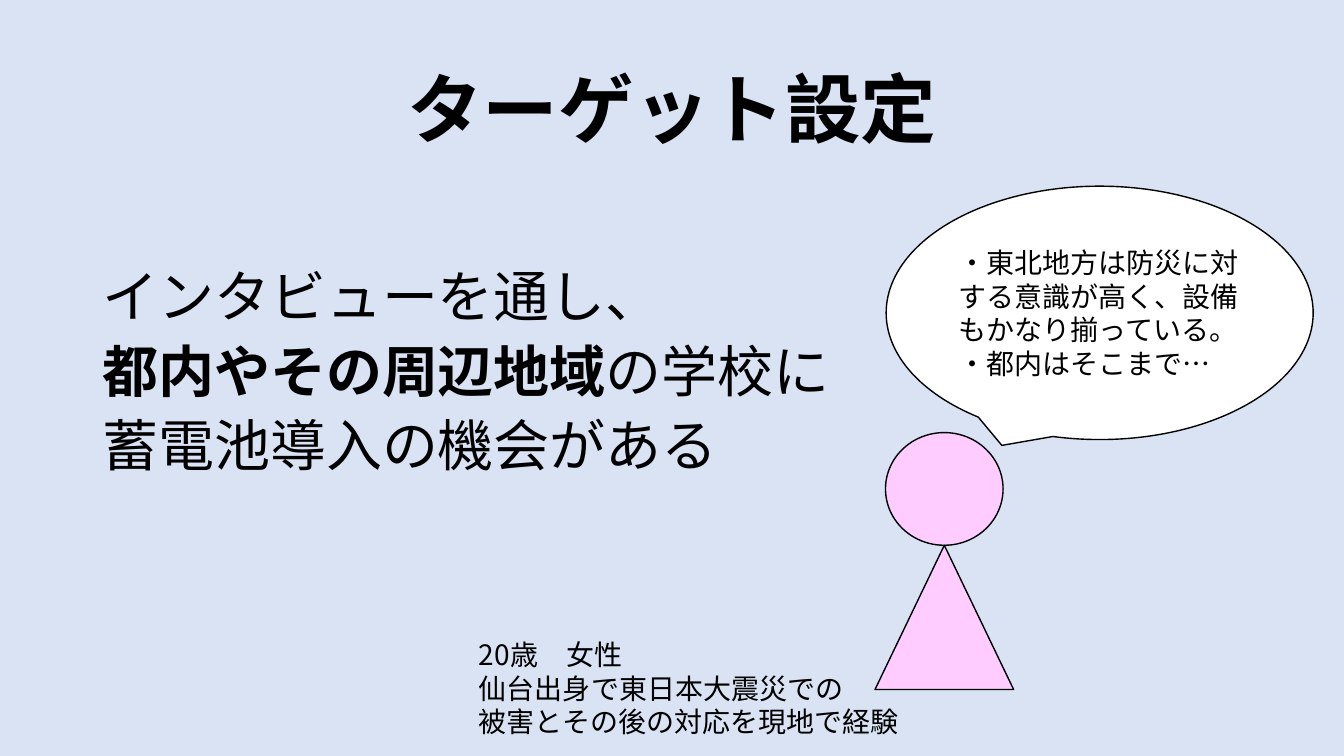
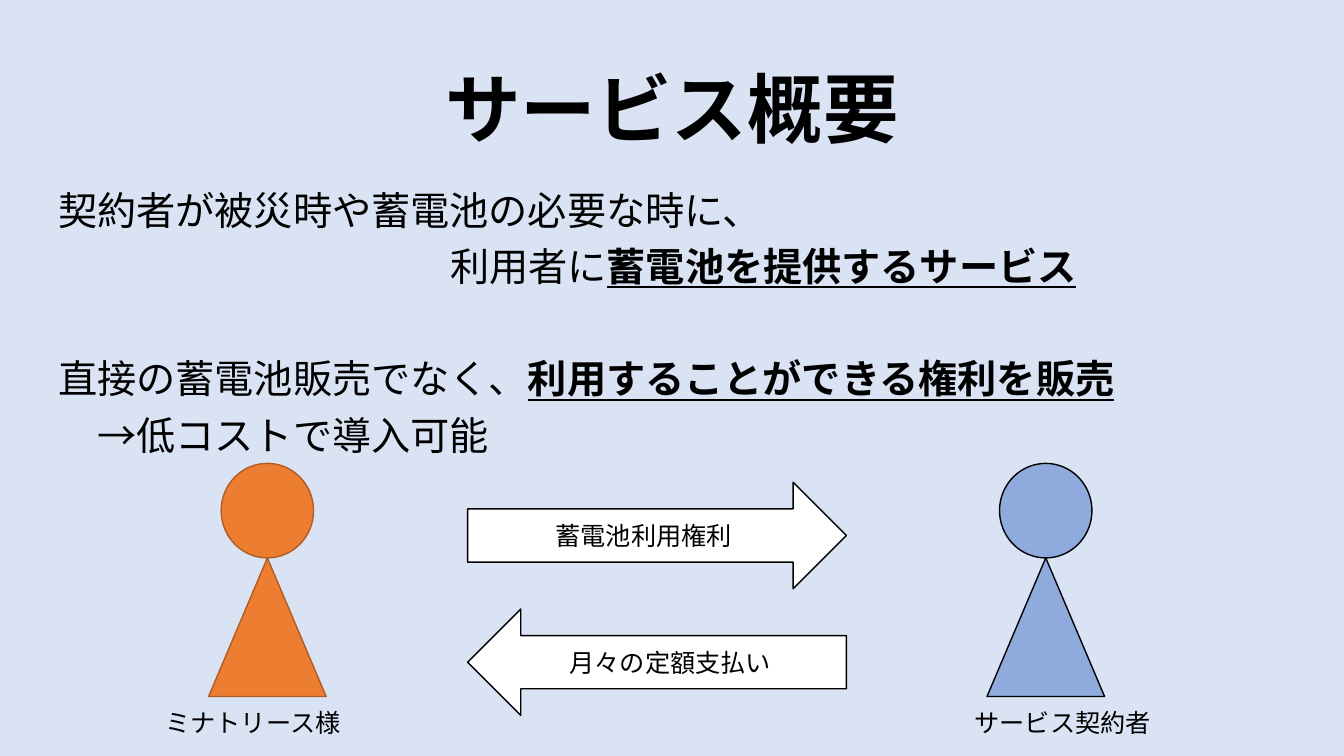
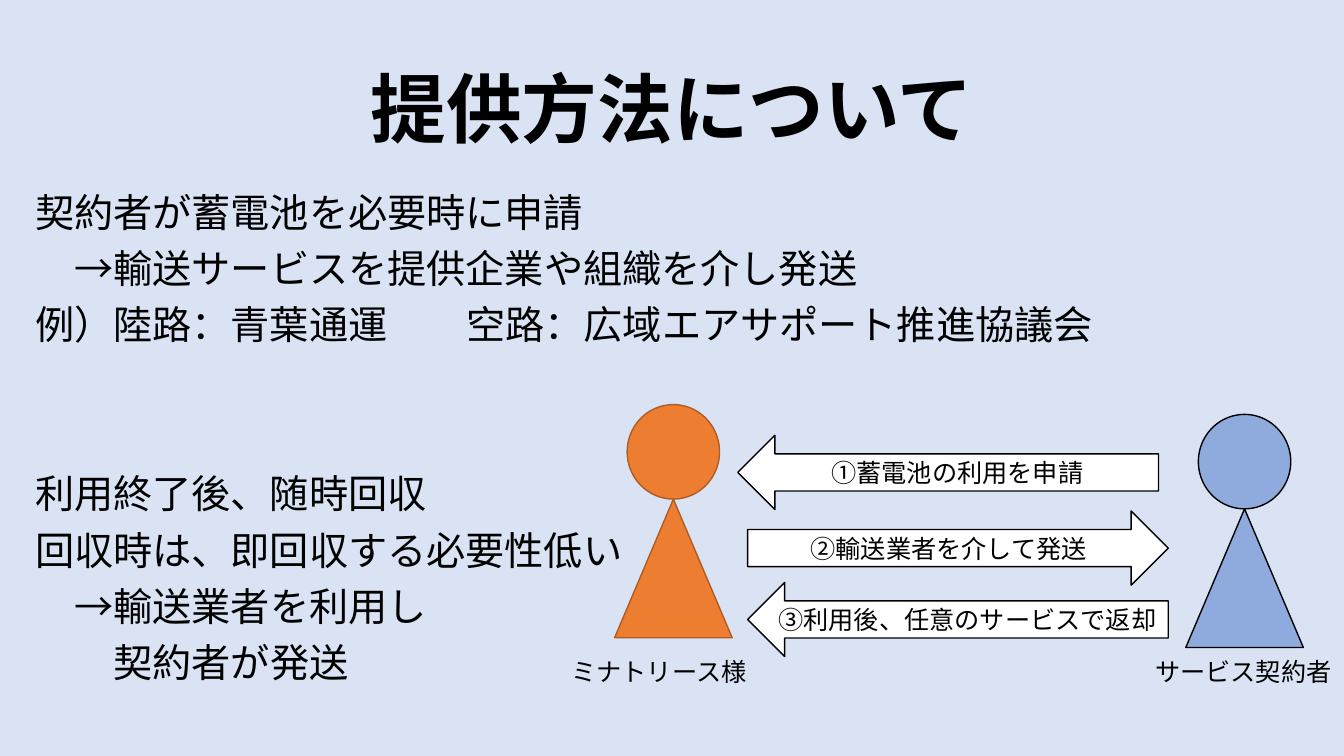
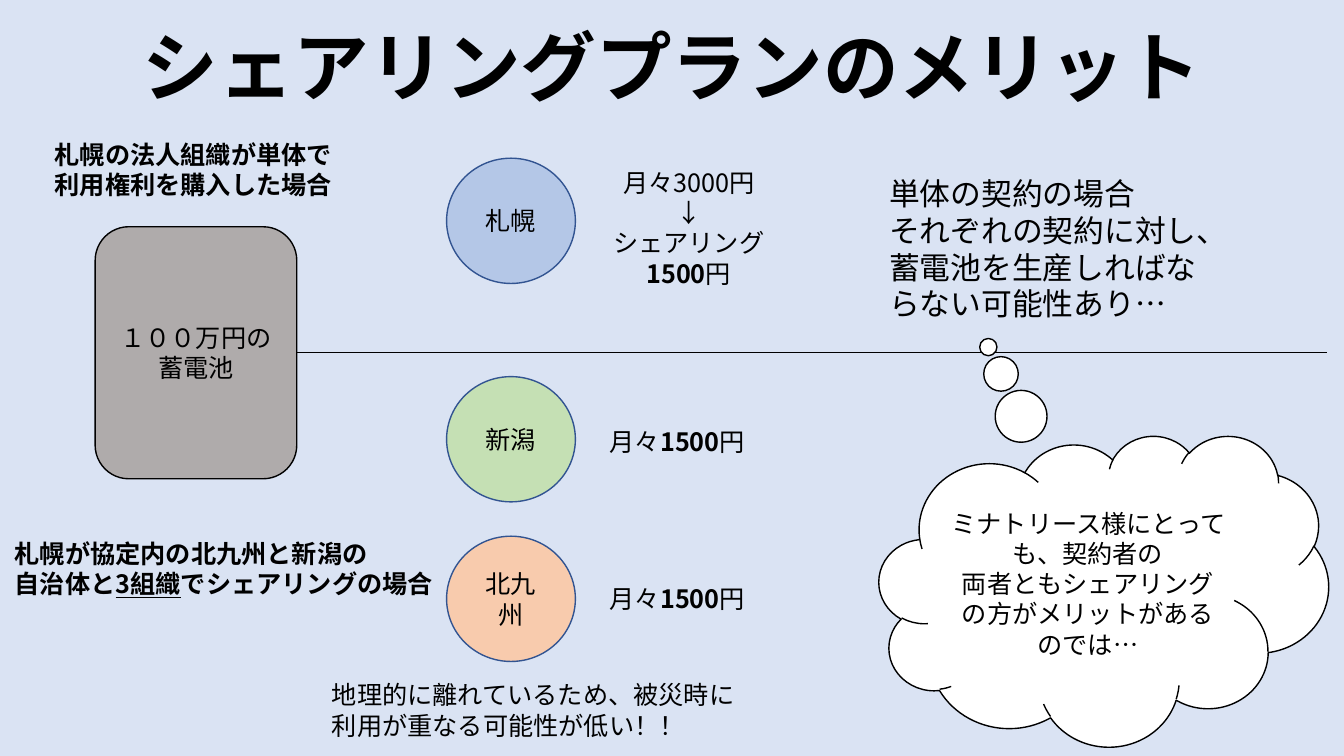
from dataclasses import dataclass
from lxml import etree
from pptx import Presentation
from pptx.dml.color import RGBColor
from pptx.enum import shapes, text
from pptx.oxml import ns
from pptx.util import Pt


@dataclass(frozen=True)
class Theme:
    font: str = "Noto Sans CJK JP"
    back: str = "DAE3F3"
    ink: str = "000000"
    white: str = "FFFFFF"
    pink: str = "FFCCFF"
    orange: str = "ED7D31"
    rust: str = "AF5C24"
    blue: str = "8FAADC"
    navy: str = "325491"
    sky: str = "B4C7E7"
    green: str = "C5E0B4"
    peach: str = "F8CBAD"
    gray: str = "AFABAB"
    title: int = 54
    lead: int = 40
    body: int = 28
    quote: int = 22
    note: int = 20
    label: int = 18


look = Theme()
kinds = shapes.MSO_SHAPE
left, mid = text.PP_ALIGN.LEFT, text.PP_ALIGN.CENTER
top, middle = text.MSO_ANCHOR.TOP, text.MSO_ANCHOR.MIDDLE


def write(frame, lines, size=look.label, bold=False, mark="b", align=left,
          anchor=top, space=1.0, before=0, gaps=None, dents=None, tab=None):
    frame.word_wrap = True
    frame.auto_size = text.MSO_AUTO_SIZE.NONE
    frame.vertical_anchor = anchor
    for row, line in enumerate(lines):
        para = frame.add_paragraph() if row else frame.paragraphs[0]
        para.alignment = align
        para.line_spacing = space
        para.space_before = Pt((gaps or {}).get(row, before) if row else 0)
        props = para._p.get_or_add_pPr()
        if dents and row in dents:
            props.set("marL", str(Pt(dents[row])))
            props.set("indent", "0")
        if "\t" in line:
            stops = etree.SubElement(props, ns.qn("a:tabLst"))
            etree.SubElement(stops, ns.qn("a:tab"), pos=str(Pt(tab)), algn="l")
        for part, words in enumerate(line.split("|")):
            if not words:
                continue
            run = para.add_run()
            run.text = words
            strong = part % 2 == 1
            run.font.size = Pt(size)
            run.font.bold = bold or (strong and "b" in mark)
            run.font.underline = strong and "u" in mark
            run.font.color.rgb = RGBColor.from_string(look.ink)
            run.font.name = look.font
            etree.SubElement(run._r.get_or_add_rPr(), ns.qn("a:ea"), typeface=look.font)


def draw(slide, kind, box, fill=look.white, edge=look.ink, lines=(), align=mid,
         size=look.label, tail=()):
    item = slide.shapes.add_shape(kind, *map(Pt, box))
    item.shadow.inherit = False
    item.fill.solid()
    item.fill.fore_color.rgb = RGBColor.from_string(fill)
    item.line.color.rgb = RGBColor.from_string(edge)
    item.line.width = Pt(1)
    for spot, value in enumerate(tail):
        item.adjustments[spot] = value
    if lines:
        write(item.text_frame, lines, size=size, align=align, anchor=middle)
    return item


deck = Presentation()
deck.slide_width, deck.slide_height = Pt(960), Pt(540)
fill = deck.slide_master.background.fill
fill.solid()
fill.fore_color.rgb = RGBColor.from_string(look.back)

pages = []
for name, y in [("ターゲット設定", 29), ("サービス概要", 29),
                ("提供方法について", 29), ("シェアリングプランのメリット", -1)]:
    page = deck.slides.add_slide(deck.slide_layouts[5])
    head = page.shapes.title
    head.left, head.top, head.width, head.height = map(Pt, (66, y, 828, 104))
    write(head.text_frame, [name], size=look.title, bold=True, align=mid,
          anchor=middle, space=0.9)
    pages.append(page)
target, service, supply, merit = pages

client = "ミナトリース様"
user = "サービス契約者"
flow = dict(space=0.9, before=10)
strong = dict(bold=True, mark="u")
notes = [
    (target, (66, 189, 783, 324),
     ["インタビューを通し、", "|都内やその周辺地域|の学校に", "蓄電池導入の機会がある"],
     dict(flow, size=look.lead)),
    (target, (335, 452, 318, 80),
     ["20歳　女性", "仙台出身で東日本大震災での", "被害とその後の対応を現地で経験"],
     dict(size=look.note)),
    (service, (34.5, 133, 896, 407),
     ["契約者が被災時や蓄電池の必要な時に、", "利用者に|蓄電池を提供するサービス|",
      "直接の蓄電池販売でなく、|利用することができる権利を販売|", "→低コストで導入可能"],
     dict(flow, size=look.body, mark="bu", gaps={2: 50}, dents={1: 280, 3: 28})),
    (supply, (18, 134.5, 830, 386),
     ["契約者が蓄電池を必要時に申請", "→輸送サービスを提供企業や組織を介し発送",
      "例）陸路：青葉通運\t空路：広域エアサポート推進協議会", "利用終了後、随時回収",
      "回収時は、即回収する必要性低い", "→輸送業者を利用し", "契約者が発送"],
     dict(flow, size=look.body, gaps={3: 90.5}, dents={1: 28, 5: 28, 6: 56}, tab=308)),
    (service, (111, 502, 142, 29), [client], {}),
    (service, (689, 502, 142, 29), [user], {}),
    (supply, (401, 465, 142, 29), [client], {}),
    (supply, (818, 465, 142, 29), [user], {}),
    (merit, (32, 96, 215, 51), ["札幌の法人組織が単体で", "利用権利を購入した場合"], strong),
    (merit, (3.5, 381, 315.5, 51),
     ["札幌が協定内の北九州と新潟の", "自治体と|3組織|でシェアリングの場合"], strong),
    (merit, (428.5, 116, 127, 94), ["月々3000円", "↓", "シェアリング", "|1500|円"],
     dict(align=mid)),
    (merit, (428.5, 301, 111, 29), ["月々|1500|円"], {}),
    (merit, (428.5, 413, 111, 29), ["月々|1500|円"], {}),
    (merit, (628, 121, 240, 114),
     ["単体の契約の場合", "それぞれの契約に対し、蓄電池を生産しればならない可能性あり…"],
     dict(size=look.quote)),
    (merit, (230, 482, 330, 51),
     ["地理的に離れているため、被災時に", "利用が重なる可能性が低い！！"], {}),
]
for page, box, lines, form in notes:
    write(page.shapes.add_textbox(*map(Pt, box)).text_frame, lines, **form)

small = (66, 67.5, 84, 99)
for page, x, y, sizes, tint, edge in [
    (target, 674.5, 309, (84, 80.5, 99, 103), look.pink, look.ink),
    (service, 191, 331, small, look.orange, look.rust),
    (service, 747, 331, small, look.blue, look.ink),
    (supply, 481, 289, small, look.orange, look.rust),
    (supply, 889, 296, small, look.blue, look.ink),
]:
    wide, high, base, tall = sizes
    draw(page, kinds.OVAL, (x - wide / 2, y, wide, high), tint, edge)
    draw(page, kinds.ISOSCELES_TRIANGLE, (x - base / 2, y + high, base, tall), tint, edge)

draw(target, kinds.OVAL_CALLOUT, (633, 133, 305, 181), align=left, size=look.note,
     lines=["・東北地方は防災に対する意識が高く、設備もかなり揃っている。", "・都内はそこまで…"],
     tail=(-0.229, 0.523))

for page, kind, box, words in [
    (service, kinds.RIGHT_ARROW, (334, 344.5, 270.5, 76), "蓄電池利用権利"),
    (service, kinds.LEFT_ARROW, (334, 435, 270.5, 76), "月々の定額支払い"),
    (supply, kinds.LEFT_ARROW, (527, 311, 300.5, 53), "①蓄電池の利用を申請"),
    (supply, kinds.RIGHT_ARROW, (534, 365, 300.5, 53), "②輸送業者を介して発送"),
    (supply, kinds.LEFT_ARROW, (534, 416, 300.5, 53), "③利用後、任意のサービスで返却"),
]:
    draw(page, kind, box, lines=[words])

for y, tint, city in [(113, look.sky, "札幌"), (269, look.green, "新潟"),
                      (383, look.peach, "北九州")]:
    draw(merit, kinds.OVAL, (319, y, 92, 89.5), tint, look.navy, [city])

store = draw(merit, kinds.ROUNDED_RECTANGLE, (68, 162, 144, 180), look.gray,
             lines=["１００万円の", "蓄電池"])
rule = merit.shapes.add_connector(shapes.MSO_CONNECTOR.STRAIGHT,
                                  Pt(212), Pt(252), Pt(948), Pt(252))
rule.begin_connect(store, 3)
rule.line.color.rgb = RGBColor.from_string(look.ink)
rule.line.width = Pt(0.5)
etree.SubElement(rule._element.spPr, ns.qn("a:effectLst"))

draw(merit, kinds.CLOUD_CALLOUT, (628, 311, 321, 222),
     lines=[client + "にとっても、契約者の", "両者ともシェアリングの方がメリットがあるのでは…"],
     tail=(-0.257, -0.784))

deck.save("out.pptx")
